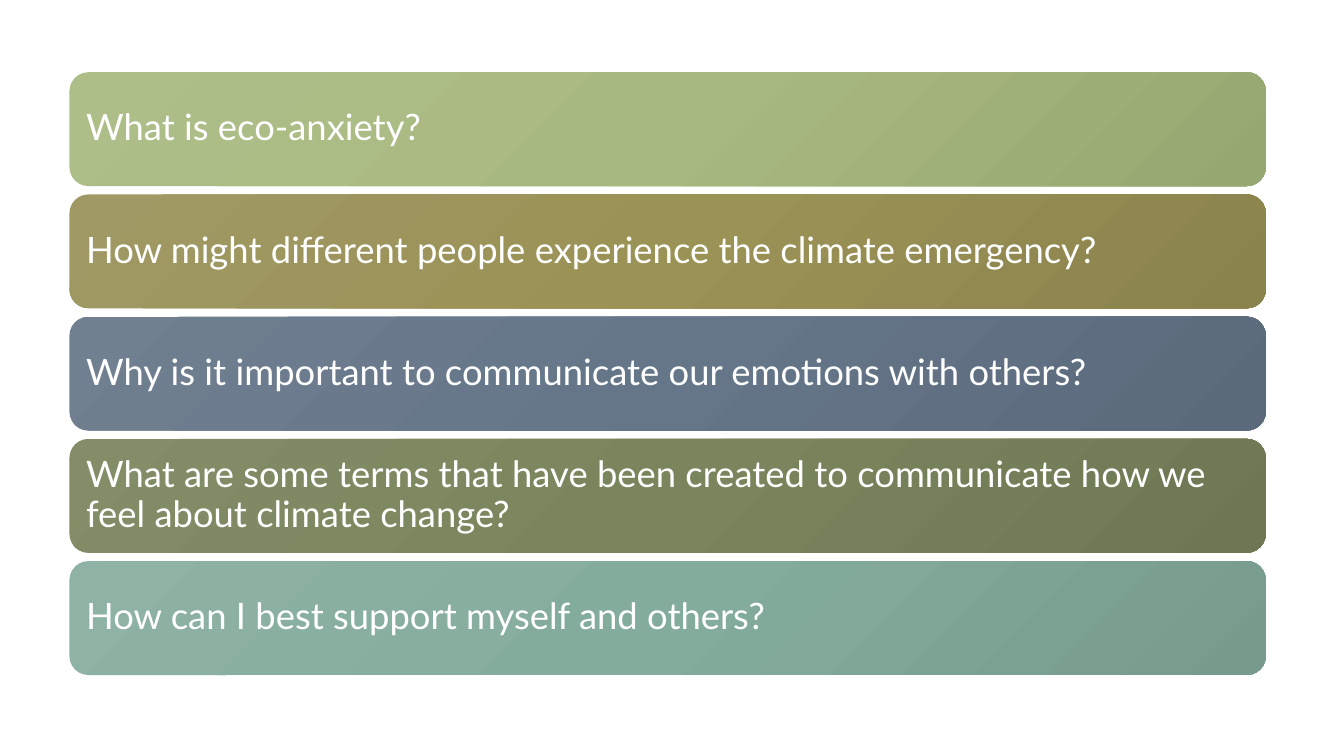
from copy import deepcopy

from pptx import Presentation
from pptx import util as u
from pptx.dml.color import RGBColor
from pptx.enum import shapes, text

# Gradient colours from upper left to lower right
COLORS = {
    "sage": ("AEBE89", "A8B97F", "97A772"),
    "olive": ("A19965", "9B9256", "8B834D"),
    "slate": ("718091", "657689", "5B6A7B"),
    "moss": ("838E69", "7A855D", "6E7754"),
    "teal": ("8EB2A4", "84AC9D", "769B8D"),
    "white": "FFFFFF",
}
QUESTIONS = {
    "sage": "What is eco-anxiety?",
    "olive": "How might different people experience the climate emergency?",
    "slate": "Why is it important to communicate our emotions with others?",
    "moss": "What are some terms that have been created to communicate how we feel about climate change?",
    "teal": "How can I best support myself and others?",
}
FRAME_FORMAT = {
    "word_wrap": True,
    "vertical_anchor": text.MSO_ANCHOR.MIDDLE,
    "margin_left": u.Cm(0.28),
    "margin_right": u.Cm(0.28),
    "margin_top": u.Cm(0.28),
    "margin_bottom": u.Cm(0.28),
}
FONT_FORMAT = {"name": "Lato", "size": u.Pt(26)}
LEFT, TOP, WIDTH, HEIGHT, PITCH = 1.75, 1.82, 30.15, 2.87, 3.08

deck = Presentation()
deck.slide_width, deck.slide_height = u.Cm(33.87), u.Cm(19.05)
slide = deck.slides.add_slide(deck.slide_layouts[6])

# Question bars
for row, (tone, wording) in enumerate(QUESTIONS.items()):
    question = slide.shapes.add_shape(
        shapes.MSO_SHAPE.ROUNDED_RECTANGLE,
        u.Cm(LEFT), u.Cm(TOP + row * PITCH), u.Cm(WIDTH), u.Cm(HEIGHT))
    question.shadow.inherit = False
    question.line.fill.background()

    # Three-stop diagonal gradient
    question.fill.gradient()
    question.fill.gradient_angle = 315
    first_stop = question.fill.gradient_stops[0]._gs
    first_stop.addnext(deepcopy(first_stop))
    for index, stop in enumerate(question.fill.gradient_stops):
        stop.position = index / 2
        stop.color.rgb = RGBColor.from_string(COLORS[tone][index])

    # Wording
    frame = question.text_frame
    for key, value in FRAME_FORMAT.items():
        setattr(frame, key, value)
    paragraph = frame.paragraphs[0]
    paragraph.text = wording
    paragraph.alignment = text.PP_ALIGN.LEFT
    paragraph.line_spacing = 0.9
    for key, value in FONT_FORMAT.items():
        setattr(paragraph.font, key, value)
    paragraph.font.color.rgb = RGBColor.from_string(COLORS["white"])

deck.save("out.pptx")
